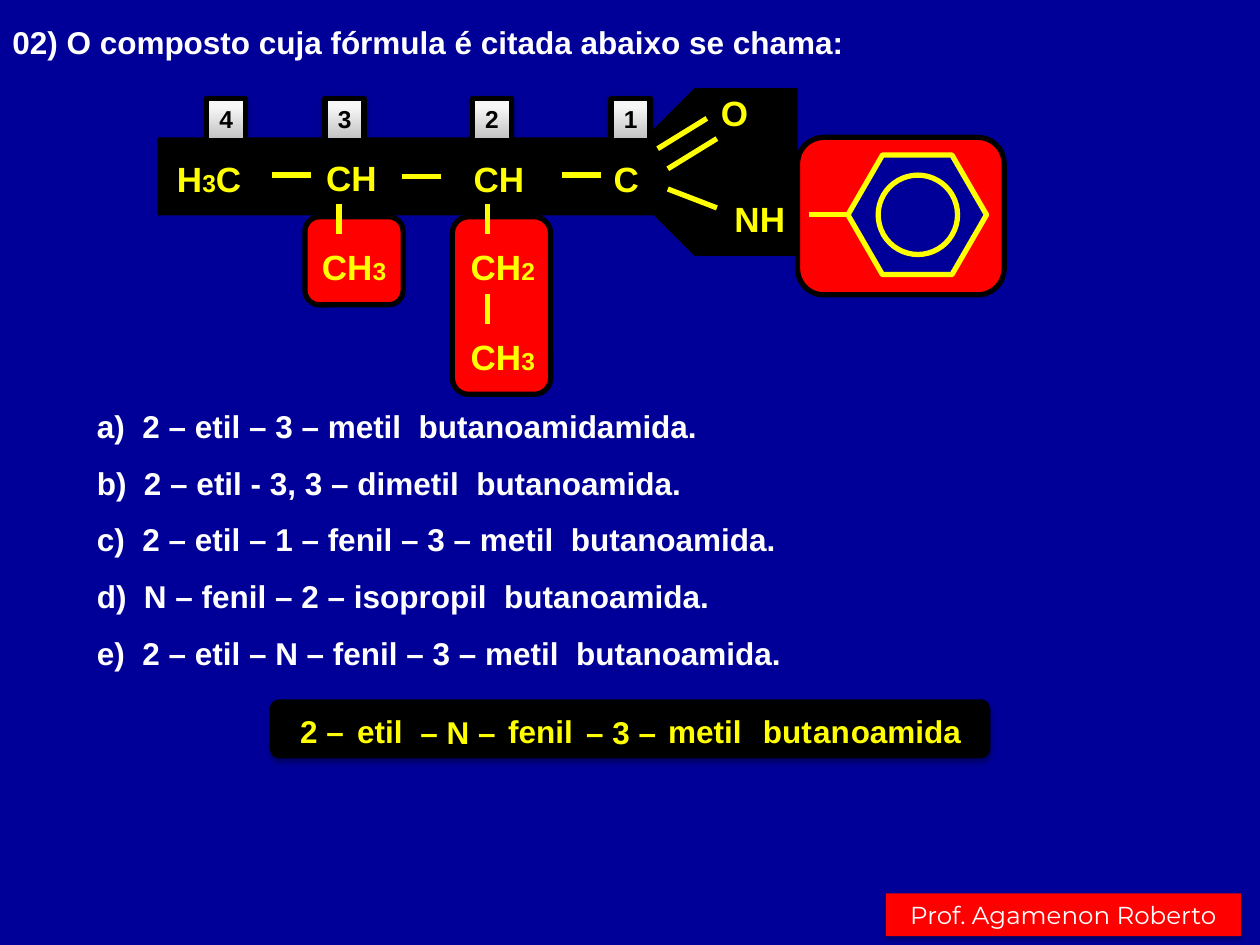
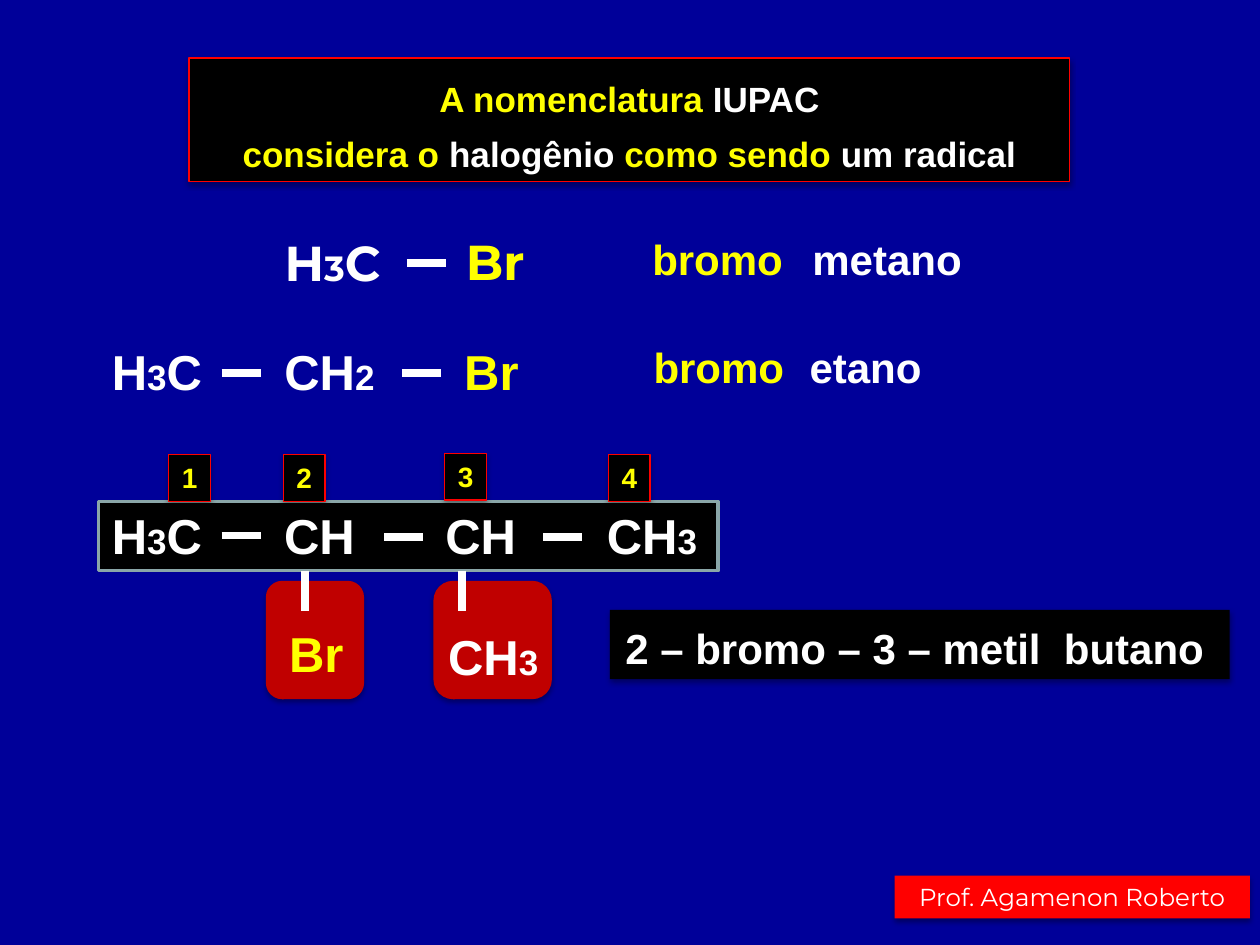
from dataclasses import dataclass
from itertools import groupby
from typing import Optional

from lxml.etree import SubElement
from pptx import Presentation
from pptx.dml.color import RGBColor
from pptx.enum.shapes import MSO_CONNECTOR as Connector, MSO_SHAPE as Preset
from pptx.enum.text import MSO_ANCHOR as Anchor, MSO_AUTO_SIZE as AutoSize, PP_ALIGN as Align
from pptx.oxml.ns import qn
from pptx.util import Inches, Pt

NAVY = RGBColor(0x00, 0x00, 0x99)
BLACK = RGBColor(0x00, 0x00, 0x00)
WHITE = RGBColor(0xFF, 0xFF, 0xFF)
YELLOW = RGBColor(0xFF, 0xFF, 0x00)
RED = RGBColor(0xFF, 0x00, 0x00)
DARK_RED = RGBColor(0xC0, 0x00, 0x00)
GREY_GREEN = RGBColor(0x8A, 0xA6, 0xA8)
GREY = RGBColor(0xBE, 0xBE, 0xBE)
PALE = RGBColor(0xF7, 0xF7, 0xF7)
ARIAL, MONTSERRAT = "Arial", "Montserrat"


@dataclass(frozen=True)
class Style:
    """Character formatting of a run."""
    size: float
    color: RGBColor
    font: str = ARIAL
    bold: bool = True


@dataclass(frozen=True)
class Box:
    """Position and size in inches."""
    left: float
    top: float
    width: float
    height: float


@dataclass(frozen=True)
class Panel:
    """A filled preset shape."""
    box: Box
    fill: RGBColor
    preset: Preset = Preset.RECTANGLE
    line: Optional[RGBColor] = None
    line_width: float = 3
    shadow: bool = False


@dataclass(frozen=True)
class Label:
    """A text box with one centred line."""
    text: str
    box: Box
    style: Style


@dataclass(frozen=True)
class Bond:
    """A straight bond between two atoms."""
    x1: float
    y1: float
    x2: float
    y2: float


Run = tuple[str, Style]

QUESTION = Style(18, WHITE)
ATOM = Style(20, YELLOW)
ANSWER = Style(18, YELLOW)
WHITE_ATOM = Style(28, WHITE)
YELLOW_ATOM = Style(28, YELLOW)
NAME = Style(24, WHITE)
PREFIX = Style(24, YELLOW)
TITLE_YELLOW, TITLE_WHITE = Style(20, YELLOW), Style(20, WHITE)
FOOTER = Style(14, WHITE, MONTSERRAT, False)


def position(box: Box) -> tuple:
    """Return the box as lengths."""
    return Inches(box.left), Inches(box.top), Inches(box.width), Inches(box.height)


def add_panel(slide, panel: Panel):
    """Draw a filled shape with an optional outline and shadow."""
    shape = slide.shapes.add_shape(panel.preset, *position(panel.box))
    shape.fill.solid()
    shape.fill.fore_color.rgb = panel.fill
    if panel.line is None:
        shape.line.fill.background()
    else:
        shape.line.color.rgb = panel.line
        shape.line.width = Pt(panel.line_width)
    shape.shadow.inherit = False
    if panel.shadow:
        effects = shape._element.spPr.find(qn("a:effectLst"))
        outer = SubElement(effects, qn("a:outerShdw"), blurRad="40000", dist="23000",
                           dir="5400000", rotWithShape="0")
        color = SubElement(outer, qn("a:srgbClr"), val=str(BLACK))
        SubElement(color, qn("a:alpha"), val="35000")
    return shape


def write(shape, lines: list[list[Run]], align=Align.CENTER, anchor=Anchor.TOP,
          spacing: float = 1, wrap: bool = False) -> None:
    """Fill a shape with lines of formatted runs."""
    frame = shape.text_frame
    frame.word_wrap = wrap
    frame.auto_size = AutoSize.SHAPE_TO_FIT_TEXT
    frame.vertical_anchor = anchor
    for index, runs in enumerate(lines):
        paragraph = frame.add_paragraph() if index else frame.paragraphs[0]
        paragraph.alignment = align
        paragraph.line_spacing = spacing
        for text, style in runs:
            run = paragraph.add_run()
            run.text = text
            run.font.name = style.font
            run.font.size = Pt(style.size)
            run.font.bold = style.bold
            run.font.color.rgb = style.color


def add_text(slide, box: Box, lines: list[list[Run]], **layout) -> None:
    """Add a text box holding the given lines."""
    write(slide.shapes.add_textbox(*position(box)), lines, **layout)


def add_labels(slide, labels: list[Label]) -> None:
    """Add one-line text boxes."""
    for label in labels:
        add_text(slide, label.box, [[(label.text, label.style)]])


def add_formulas(slide, formulas: list[Label], index_size: float) -> None:
    """Add chemical groups, with their digits in a smaller size."""
    for formula in formulas:
        style = formula.style
        small = Style(index_size, style.color, style.font)
        runs = [("".join(part), small if digit else style)
                for digit, part in groupby(formula.text, str.isdigit)]
        add_text(slide, formula.box, [runs])


def add_bonds(slide, bonds: list[Bond], color: RGBColor, width: float) -> None:
    """Draw bonds as plain lines."""
    for bond in bonds:
        line = slide.shapes.add_connector(Connector.STRAIGHT, Inches(bond.x1), Inches(bond.y1),
                                          Inches(bond.x2), Inches(bond.y2))
        line.line.color.rgb = color
        line.line.width = Pt(width)
        SubElement(line._element.spPr, qn("a:effectLst"))


def add_slide(presentation):
    """Add a blank slide with the navy background."""
    slide = presentation.slides.add_slide(presentation.slide_layouts[6])
    slide.background.fill.solid()
    slide.background.fill.fore_color.rgb = NAVY
    return slide


def add_footer(slide, left: float, top: float) -> None:
    """Add the red strip with the teacher's name."""
    strip = add_panel(slide, Panel(Box(left, top, 2.82, 0.34), RED, shadow=True))
    write(strip, [[("Prof. Agamenon Roberto", FOOTER)]])


def add_amide_slide(presentation) -> None:
    """Build the question about the amide's name."""
    slide = add_slide(presentation)
    rounded = Preset.ROUNDED_RECTANGLE
    add_panel(slide, Panel(Box(2.14, 5.55, 5.72, 0.47), BLACK, rounded, shadow=True))
    for radical in (Box(6.33, 1.09, 1.64, 1.25), Box(2.42, 1.72, 0.78, 0.7),
                    Box(3.59, 1.72, 0.78, 1.41)):
        add_panel(slide, Panel(radical, RED, rounded, BLACK))
    amide = add_panel(slide, Panel(Box(5.04, 0.74, 1.33, 1.25), BLACK, Preset.SNIP_2_SAME_RECTANGLE))
    amide.rotation = 270
    amide.adjustments[0] = 0.345
    add_panel(slide, Panel(Box(1.25, 1.09, 4.06, 0.62), BLACK))

    add_text(slide, Box(0, 0.13, 6.86, 0.4),
             [[("02) O composto cuja fórmula é citada abaixo se chama:", QUESTION)]],
             align=Align.JUSTIFY, anchor=Anchor.MIDDLE)
    options = ("a)  2 – etil – 3 – metil  butanoamidamida.",
               "b)  2 – etil - 3, 3 – dimetil  butanoamida.",
               "c)  2 – etil – 1 – fenil – 3 – metil  butanoamida.",
               "d)  N – fenil – 2 – isopropil  butanoamida.",
               "e)  2 – etil – N – fenil – 3 – metil  butanoamida.")
    add_text(slide, Box(0.67, 3.02, 5.69, 2.37), [[(option, QUESTION)] for option in options],
             align=Align.JUSTIFY, anchor=Anchor.MIDDLE, spacing=1.5)

    for number, left in enumerate((4.85, 3.75, 2.58, 1.64), start=1):
        locant = add_panel(slide, Panel(Box(left, 0.78, 0.31, 0.34), GREY, line=BLACK, shadow=True))
        locant.fill.gradient()
        locant.fill.gradient_angle = 90
        for stop, color, place in zip(locant.fill.gradient_stops, (GREY, PALE), (0, 0.8)):
            stop.color.rgb = color
            stop.position = place
        write(locant, [[(str(number), Style(14, BLACK))]])

    groups = (("H3C", 1.3, 1.2, 0.72), ("C", 4.77, 1.2, 0.4), ("O", 5.62, 0.68, 0.42),
              ("NH", 5.72, 1.52, 0.62), ("CH", 2.48, 1.19, 0.62), ("CH", 3.65, 1.2, 0.62),
              ("CH3", 2.45, 1.9, 0.72), ("CH2", 3.63, 1.9, 0.72), ("CH3", 3.63, 2.61, 0.72))
    add_formulas(slide, [Label(text, Box(left, top, width, 0.44), ATOM)
                         for text, left, top, width in groups], 14)
    across = ((2.16, 1.39), (3.19, 1.4), (4.46, 1.39), (6.42, 1.7))
    down = ((2.69, 1.62), (3.87, 1.62), (3.87, 2.33))
    slanted = [Bond(5.3, 1.34, 5.69, 1.1), Bond(5.22, 1.18, 5.61, 0.94), Bond(5.3, 1.5, 5.69, 1.65)]
    add_bonds(slide, slanted + [Bond(x, y, x + 0.31, y) for x, y in across]
              + [Bond(x, y, x, y + 0.24) for x, y in down], YELLOW, 3)
    ring = add_panel(slide, Panel(Box(6.73, 1.23, 1.1, 0.95), NAVY, Preset.HEXAGON, YELLOW))
    ring.adjustments[0] = 0.289
    add_panel(slide, Panel(Box(6.97, 1.39, 0.63, 0.63), NAVY, Preset.OVAL, YELLOW))

    pieces = (("2 –", 2.28, 5.6, 0.55), ("etil", 2.73, 5.6, 0.57), ("– N –", 3.23, 5.61, 0.81),
              ("fenil", 3.93, 5.6, 0.72), ("– 3 –", 4.55, 5.61, 0.76), ("metil", 5.2, 5.6, 0.79),
              ("but", 5.95, 5.6, 0.6), ("an", 6.35, 5.6, 0.5), ("o", 6.65, 5.6, 0.36),
              ("amida", 6.8, 5.6, 0.93))
    add_labels(slide, [Label(text, Box(left, top, width, 0.4), ANSWER)
                       for text, left, top, width in pieces])
    add_footer(slide, 7.03, 7.09)


def add_halogen_slide(presentation) -> None:
    """Build the slide on naming halides."""
    slide = add_slide(presentation)
    for left, width in ((3.44, 0.94), (2.11, 0.78)):
        add_panel(slide, Panel(Box(left, 4.61, width, 0.94), DARK_RED,
                               Preset.ROUNDED_RECTANGLE, shadow=True))
    add_panel(slide, Panel(Box(0.78, 3.98, 4.92, 0.55), BLACK, line=GREY_GREEN, line_width=2))
    title = add_panel(slide, Panel(Box(1.5, 0.46, 6.99, 0.98), BLACK, line=RED,
                                   line_width=0.75, shadow=True))
    write(title, [[("A nomenclatura ", TITLE_YELLOW), ("IUPAC", TITLE_WHITE)],
                  [("considera o ", TITLE_YELLOW), ("halogênio ", TITLE_WHITE),
                   ("como sendo ", TITLE_YELLOW), ("um radical", TITLE_WHITE)]],
          anchor=Anchor.MIDDLE, spacing=1.3, wrap=True)

    groups = (("H3C", 2.13, 1.8, 1.02, Style(28, WHITE, MONTSERRAT)),
              ("Br", 3.59, 1.79, 0.68, Style(28, YELLOW, MONTSERRAT)),
              ("H3C", 0.78, 2.66, 0.93, WHITE_ATOM), ("CH2", 2.15, 2.66, 0.93, WHITE_ATOM),
              ("Br", 3.58, 2.66, 0.64, YELLOW_ATOM),
              ("H3C", 0.78, 3.96, 0.93, WHITE_ATOM), ("CH", 2.15, 3.96, 0.77, WHITE_ATOM),
              ("CH", 3.43, 3.96, 0.77, WHITE_ATOM), ("CH3", 4.71, 3.96, 0.93, WHITE_ATOM),
              ("Br", 2.19, 4.9, 0.64, YELLOW_ATOM), ("CH3", 3.45, 4.92, 0.93, WHITE_ATOM))
    add_formulas(slide, [Label(text, Box(left, top, width, 0.57), style)
                         for text, left, top, width, style in groups], 20)
    across = ((3.23, 2.09), (1.76, 2.96), (3.19, 2.96), (1.76, 4.25), (3.05, 4.26), (4.31, 4.26))
    add_bonds(slide, [Bond(x, y, x + 0.31, y) for x, y in across]
              + [Bond(x, 4.53, x, 4.85) for x in (2.42, 3.67)], WHITE, 4.5)

    for number, (left, top) in enumerate(((1.34, 3.61), (2.25, 3.61), (3.53, 3.6), (4.83, 3.61)), start=1):
        locant = add_panel(slide, Panel(Box(left, top, 0.33, 0.37), BLACK, line=RED,
                                        line_width=0.75, shadow=True))
        write(locant, [[(str(number), Style(16, YELLOW))]])

    add_panel(slide, Panel(Box(4.84, 4.84, 4.92, 0.55), BLACK, shadow=True))
    names = (("bromo", 5.07, 1.8, 1.25, PREFIX), ("metano", 6.34, 1.8, 1.4, NAME),
             ("bromo", 5.08, 2.66, 1.25, PREFIX), ("etano", 6.32, 2.66, 1.1, NAME),
             ("2 – bromo – 3 – metil  butano", 4.84, 4.89, 4.84, NAME))
    add_labels(slide, [Label(text, Box(left, top, width, 0.51), style)
                       for text, left, top, width, style in names])
    add_footer(slide, 7.1, 6.95)


def main() -> None:
    """Build and save the presentation."""
    presentation = Presentation()
    presentation.slide_width = Inches(10)
    presentation.slide_height = Inches(7.5)
    add_amide_slide(presentation)
    add_halogen_slide(presentation)
    presentation.save("out.pptx")


if __name__ == "__main__":
    main()
